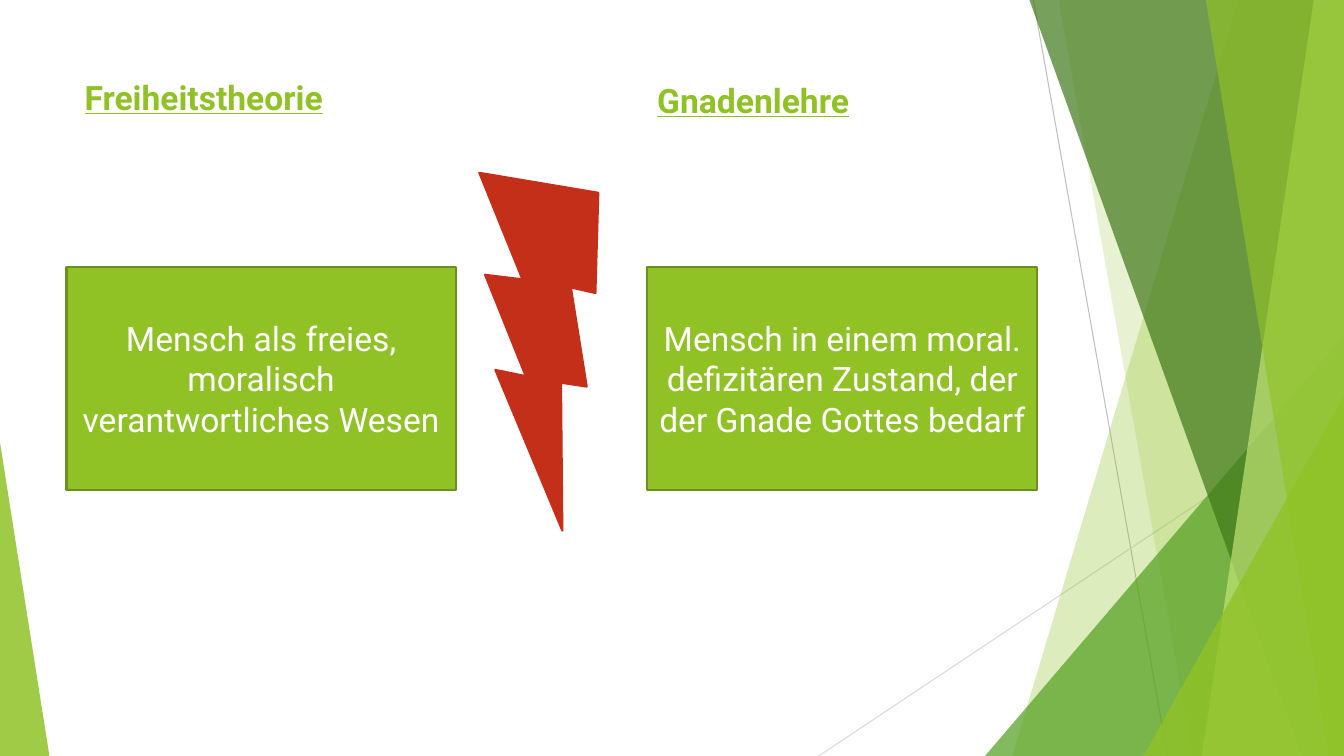
from lxml import etree
from pptx import Presentation
from pptx.dml.color import RGBColor
from pptx.enum import shapes, text
from pptx.oxml.ns import qn
from pptx.util import Inches, Pt

WIDTH, HEIGHT = 13.33, 7.5
FONT = "Roboto"
COLORS = {
    "lime": "90C226",
    "green": "54A021",
    "forest": "3F7819",
    "pale": "C0E474",
    "border": "6B901C",
    "red": "C42F1A",
    "white": "FFFFFF",
    "gray": "BFBFBF",
    "light_gray": "D9D9D9",
}


def rgb(name):
    return RGBColor.from_string(COLORS[name])


def paint(sp, fill, alpha=100, line=None):
    """Set fill, opacity in percent and outline; remove the shadow."""
    sp.shadow.inherit = False
    sp.fill.solid()
    sp.fill.fore_color.rgb = rgb(fill)
    if alpha < 100:
        color = sp.fill._xPr.find(qn("a:solidFill"))[0]
        etree.SubElement(color, qn("a:alpha"), val=str(alpha * 1000))
    if line:
        sp.line.color.rgb = rgb(line)
        sp.line.width = Pt(1.5)
    else:
        sp.line.fill.background()


def add_shape(s, kind, box, fill, **style):
    sp = s.shapes.add_shape(kind, *map(Inches, box))
    paint(sp, fill, **style)
    return sp


def add_line(s, start, end, color):
    line = s.shapes.add_connector(
        shapes.MSO_CONNECTOR.STRAIGHT, *map(Inches, start + end))
    line.line.color.rgb = rgb(color)
    line.line.width = Pt(0.75)
    etree.SubElement(line._element.spPr, qn("a:effectLst"))


def add_band(s, top_x, bottom_x, fill, alpha):
    """Fill from a slanted left edge to the right edge of the slide."""
    points = [(top_x, 0), (WIDTH, 0), (WIDTH, HEIGHT), (bottom_x, HEIGHT)]
    corners = [(Inches(x), Inches(y)) for x, y in points]
    builder = s.shapes.build_freeform(*corners[0])
    builder.add_line_segments(corners[1:], close=True)
    paint(builder.convert_to_shape(), fill, alpha)


def add_corner(s, left, top, right, apex, fill, alpha):
    """Triangle standing on the bottom edge, apex at 0 (left) or 1 (right)."""
    box = (left, top, right - left, HEIGHT - top)
    sp = add_shape(s, shapes.MSO_SHAPE.ISOSCELES_TRIANGLE, box, fill, alpha=alpha)
    sp.adjustments[0] = apex


def write(sp, content, color="white", size=24, bold=False, underline=False,
          align=text.PP_ALIGN.CENTER, anchor=text.MSO_ANCHOR.MIDDLE, before=0):
    tf = sp.text_frame
    tf.word_wrap = True
    tf.vertical_anchor = anchor
    p = tf.paragraphs[0]
    p.alignment = align
    p.space_before = Pt(before)
    r = p.add_run()
    r.text = content
    r.font.name = FONT
    r.font.size = Pt(size)
    r.font.bold = bold
    r.font.underline = underline
    r.font.color.rgb = rgb(color)


def add_backdrop(s):
    add_line(s, (10.25, 0), (11.58, HEIGHT), "gray")
    add_line(s, (WIDTH, 4.03), (8.12, HEIGHT), "light_gray")
    add_band(s, 12.28, 10.04, "lime", 30)
    add_band(s, 10.5, 11.83, "lime", 20)
    add_corner(s, 9.77, 3.33, WIDTH, 1, "green", 72)
    add_band(s, 10.21, 12.91, "forest", 70)
    add_band(s, 13.03, 11.92, "pale", 70)
    add_band(s, 11.96, 13.18, "lime", 65)
    add_corner(s, 11.34, 3.93, WIDTH, 1, "lime", 80)
    add_corner(s, 0, 4.39, 0.49, 0, "lime", 85)


def add_heading(s, box, content):
    sp = s.shapes.add_textbox(*map(Inches, box))
    write(sp, content, color="lime", bold=True, underline=True, before=10,
          align=text.PP_ALIGN.LEFT, anchor=text.MSO_ANCHOR.BOTTOM)


def add_thesis(s, box, content):
    sp = add_shape(s, shapes.MSO_SHAPE.RECTANGLE, box, "lime", line="border")
    write(sp, content)


def add_conflict(s, box):
    bolt = add_shape(s, shapes.MSO_SHAPE.LIGHTNING_BOLT, box, "red", line="red")
    bolt.rotation = 35.7


def main():
    prs = Presentation()
    prs.slide_width, prs.slide_height = Inches(WIDTH), Inches(HEIGHT)
    s = prs.slides.add_slide(prs.slide_layouts[6])
    add_backdrop(s)
    add_heading(s, (0.74, 0.58, 4.58, 0.63), "Freiheitstheorie")
    add_heading(s, (6.42, 0.61, 3.49, 0.63), "Gnadenlehre")
    add_thesis(s, (0.66, 2.65, 3.86, 2.21),
               "Mensch als freies, moralisch verantwortliches Wesen")
    add_thesis(s, (6.42, 2.65, 3.87, 2.21),
               "Mensch in einem moral. defizitären Zustand, der der Gnade Gottes bedarf")
    add_conflict(s, (3.95, 1.81, 2.74, 2.93))
    prs.save("out.pptx")


if __name__ == "__main__":
    main()
